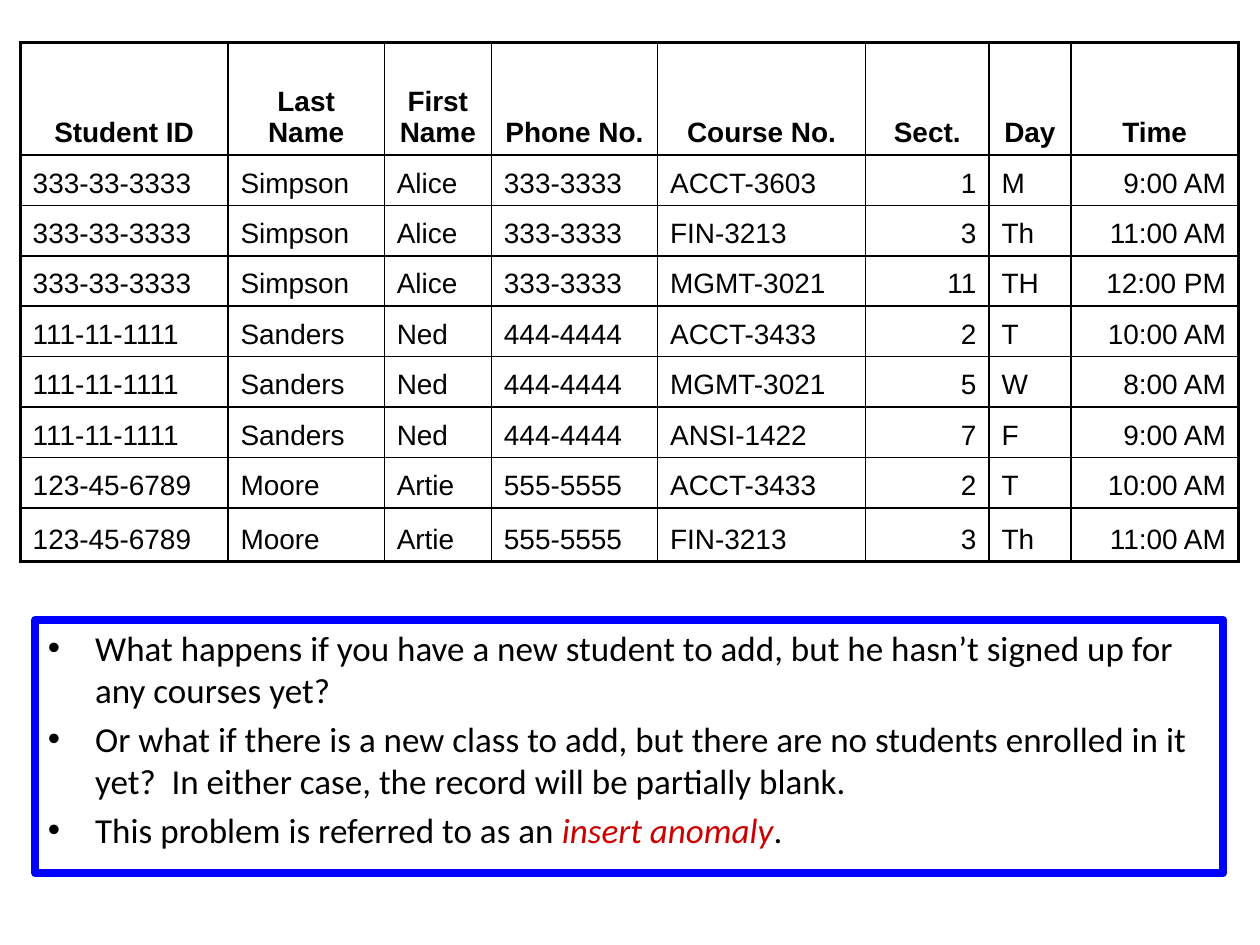
"""Build a slide with a student enrolment table and notes on the insert anomaly."""
from lxml import etree
from pptx import Presentation
from pptx.dml.color import RGBColor
from pptx.enum.text import MSO_ANCHOR, MSO_AUTO_SIZE, PP_ALIGN
from pptx.oxml.ns import qn
from pptx.util import Inches, Pt

LEFT, CENTER, RIGHT = PP_ALIGN.LEFT, PP_ALIGN.CENTER, PP_ALIGN.RIGHT
TOP, BOTTOM = MSO_ANCHOR.TOP, MSO_ANCHOR.BOTTOM
NO_AUTOFIT = MSO_AUTO_SIZE.NONE

BLACK, WHITE, BLUE, RED = "000000", "FFFFFF", "0000FF", "CC0000"
COLUMNS = [
    ("Student ID", 1.65, LEFT),
    ("Last Name", 1.24, LEFT),
    ("First Name", 0.85, LEFT),
    ("Phone No.", 1.32, LEFT),
    ("Course No.", 1.65, LEFT),
    ("Sect.", 0.98, RIGHT),
    ("Day", 0.65, LEFT),
    ("Time", 1.33, RIGHT),
]
STUDENTS = [
    (("333-33-3333", "Simpson", "Alice", "333-3333"), [
        ("ACCT-3603", "1", "M", "9:00 AM"),
        ("FIN-3213", "3", "Th", "11:00 AM"),
        ("MGMT-3021", "11", "TH", "12:00 PM"),
    ]),
    (("111-11-1111", "Sanders", "Ned", "444-4444"), [
        ("ACCT-3433", "2", "T", "10:00 AM"),
        ("MGMT-3021", "5", "W", "8:00 AM"),
        ("ANSI-1422", "7", "F", "9:00 AM"),
    ]),
    (("123-45-6789", "Moore", "Artie", "555-5555"), [
        ("ACCT-3433", "2", "T", "10:00 AM"),
        ("FIN-3213", "3", "Th", "11:00 AM"),
    ]),
]
NOTES = [
    [("What happens if you have a new student to add, but he hasn’t signed up for any courses yet?", {})],
    [("Or what if there is a new class to add, but there are no students enrolled in it yet?  "
      "In either case, the record will be partially blank.", {})],
    [("This problem is referred to as an ", {}),
     ("insert anomaly", {"color": RED, "italic": True}),
     (".", {})],
]


def add_run(paragraph, text, color=BLACK, **font_format):
    """Add a run of text with the given colour and font values."""
    run = paragraph.add_run()
    run.text = text
    run.font.color.rgb = RGBColor.from_string(color)
    for name, value in font_format.items():
        setattr(run.font, name, value)


def add_border(cell, side, width):
    """Draw a solid black border on one side of a table cell."""
    properties = cell._tc.get_or_add_tcPr()
    line = etree.SubElement(properties, qn(f"a:ln{side}"), w=str(Pt(width)))
    fill = etree.SubElement(line, qn("a:solidFill"))
    etree.SubElement(fill, qn("a:srgbClr"), val=BLACK)


presentation = Presentation()
presentation.slide_width = Inches(10)
presentation.slide_height = Inches(7.5)
slide = presentation.slides.add_slide(presentation.slide_layouts[1])
title, notes = slide.placeholders
title.element.getparent().remove(title.element)

rows = [[heading for heading, _, _ in COLUMNS]]
rows += [student + course for student, courses in STUDENTS for course in courses]
row_heights = [0.89] + [0.4] * (len(rows) - 2) + [0.43]
last_row, last_column = len(rows) - 1, len(COLUMNS) - 1

table = slide.shapes.add_table(
    len(rows), len(COLUMNS), Inches(0.16), Inches(0.34), Inches(9.68), Inches(4.1)
).table
table.first_row = table.horz_banding = False
for column, (_, width, _) in zip(table.columns, COLUMNS):
    column.width = Inches(width)

for row_index, (values, height) in enumerate(zip(rows, row_heights)):
    table.rows[row_index].height = Inches(height)
    is_header = row_index == 0
    for column_index, value in enumerate(values):
        cell = table.cell(row_index, column_index)
        outer_edges = {
            "L": column_index == 0,
            "R": column_index == last_column,
            "T": is_header,
            "B": row_index == last_row,
        }
        for side, is_outer in outer_edges.items():
            add_border(cell, side, 2 if is_outer else 1)
        cell.fill.background()
        cell.vertical_anchor = BOTTOM
        paragraph = cell.text_frame.paragraphs[0]
        paragraph.alignment = CENTER if is_header else COLUMNS[column_index][2]
        add_run(paragraph, value, name="Arial", size=Pt(16), bold=is_header)

notes_place = {"left": 0.28, "top": 4.92, "width": 9.43, "height": 2.01}
for name, value in notes_place.items():
    setattr(notes, name, Inches(value))
notes.fill.solid()
notes.fill.fore_color.rgb = RGBColor.from_string(WHITE)
notes.line.color.rgb = RGBColor.from_string(BLUE)
notes.line.width = Pt(4.5)

text_frame = notes.text_frame
frame_format = {"word_wrap": True, "auto_size": NO_AUTOFIT, "vertical_anchor": TOP}
for name, value in frame_format.items():
    setattr(text_frame, name, value)
for index, runs in enumerate(NOTES):
    paragraph = text_frame.add_paragraph() if index else text_frame.paragraphs[0]
    for text, run_format in runs:
        add_run(paragraph, text, name="Calibri", size=Pt(20), **run_format)

presentation.save("out.pptx")
